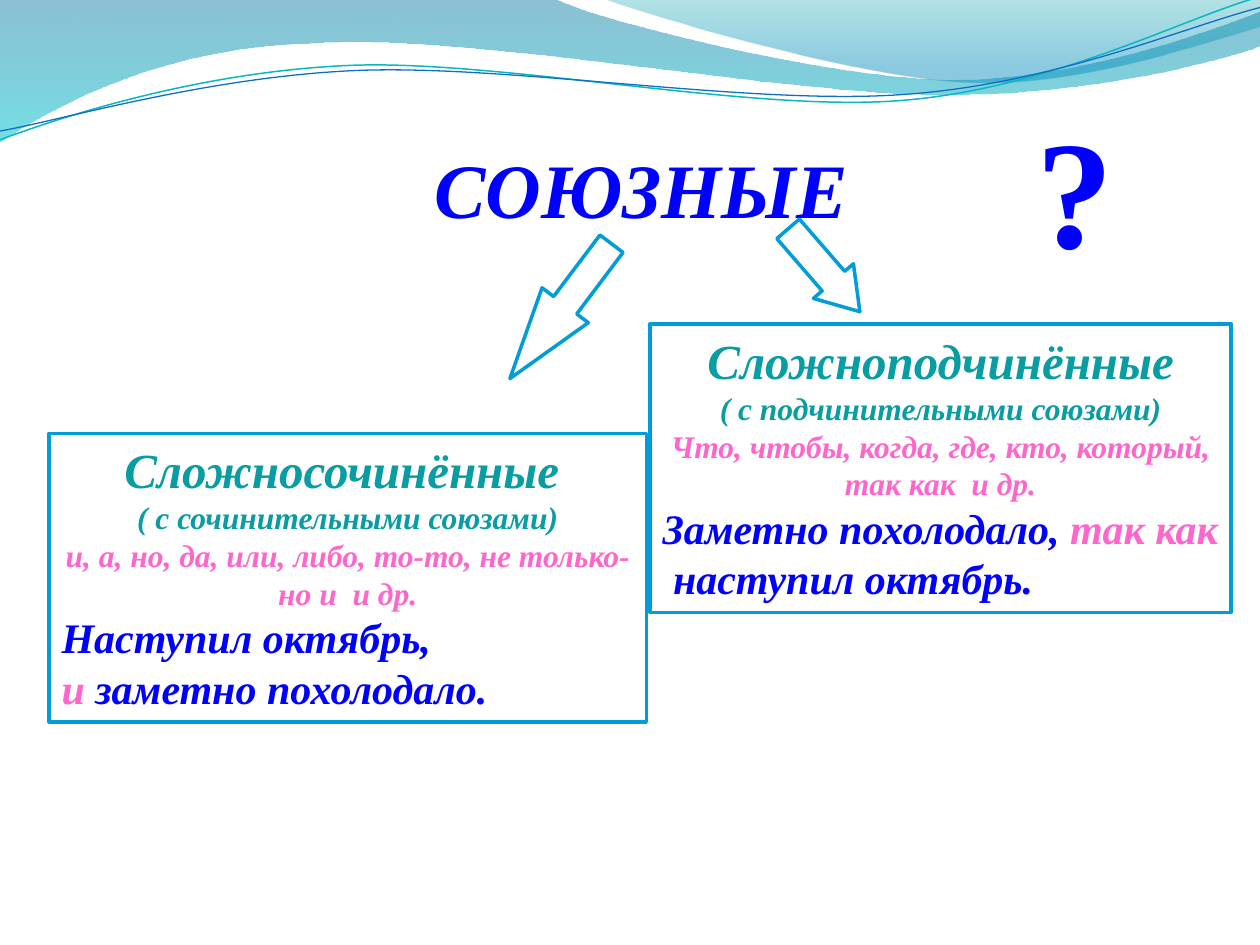
"""Build a slide on the two kinds of compound sentences joined by conjunctions."""
from pptx import Presentation, util as u
from pptx.dml.color import RGBColor
from pptx.enum import shapes, text
from pptx.oxml import ns
from lxml import etree

BLUE = RGBColor(0x00, 0x00, 0xFF)
TEAL = RGBColor(0x08, 0x9C, 0xA3)
PINK = RGBColor(0xFF, 0x66, 0xCC)
WHITE = RGBColor(0xFF, 0xFF, 0xFF)
EDGE = RGBColor(0x00, 0x9D, 0xD9)
AQUA = RGBColor(0x0A, 0xB8, 0xBF)
NAVY = RGBColor(0x0F, 0x6F, 0xC6)
SEA = RGBColor(0x00, 0x74, 0xA1)
CYAN = RGBColor(0x00, 0xC6, 0xCF)
JADE = RGBColor(0x00, 0xA1, 0xA9)
SKY = RGBColor(0x00, 0x8B, 0xBF)
FONT = "Times New Roman"
MID = text.PP_ALIGN.CENTER
LEFT = text.PP_ALIGN.LEFT

WAVES = [
    ([(0, 0), (4.4, -0.01), (4.76, 0.17, 6.64, 0.63, 7.58, 0.63),
      (8.53, 0.63, 9.58, 0.26, 10, 0.09), (10.01, 0.36),
      (9.83, 0.44, 8.7, 0.76, 7.46, 0.75), (6.22, 0.75, 3.82, 0.28, 2.57, 0.34),
      (1.29, 0.36, 0.46, 0.83, -0.01, 1.13), (0, 0)],
     [(0, SEA, 45), (1, CYAN, 55)]),
    ([(4.79, -0.01), (5.09, 0.11, 6.82, 0.62, 7.69, 0.65),
      (8.56, 0.69, 9.61, 0.32, 10, 0.21), (10, 0), (4.79, -0.01)],
     [(0, JADE, 30), (0.8, SKY, 45)]),
]
CURVES = [
    ([(0, 1.11), (0.48, 0.93, 1.58, 0.57, 2.77, 0.52),
      (3.95, 0.47, 5.93, 0.89, 7.13, 0.8), (8.33, 0.71, 9.38, 0.15, 9.98, -0.02)],
     AQUA, 0.85),
    ([(0, 1.04), (0.47, 0.96, 1.64, 0.61, 2.83, 0.56),
      (4.03, 0.51, 5.97, 0.84, 7.17, 0.75), (8.36, 0.67, 9.41, 0.21, 10, 0.06)],
     NAVY, 0.75),
]
TITLE = [(LEFT, 44, [("СОЮЗНЫЕ", BLUE)])]
MARK = [(LEFT, 88, [("?", BLUE)])]
BOXES = [
    ((0.39, 3.44, 4.74, 2.29), [
        (MID, 28, [("Сложносочинённые ", TEAL)]),
        (MID, 18, [("( с сочинительными союзами)", TEAL)]),
        (MID, 18, [("и, а, но, да, или, либо, то-то, не только- но и  и др.", PINK)]),
        (LEFT, 24, [("Наступил октябрь,", BLUE)]),
        (LEFT, 24, [("и", PINK), (" заметно похолодало.", BLUE)])]),
    ((5.16, 2.57, 4.61, 2.29), [
        (MID, 28, [("Сложноподчинённые", TEAL)]),
        (MID, 18, [("( с подчинительными союзами)", TEAL)]),
        (MID, 18, [("Что, чтобы, когда, где, кто, который, так как  и др.", PINK)]),
        (LEFT, 24, [("Заметно похолодало, ", BLUE), ("так как ", PINK),
                    (" наступил октябрь.", BLUE)])]),
]
ARROWS = [
    ((4.22, 1.8, 0.46, 1.34), 37, (0.5, 1.585)),
    ((6.33, 1.71, 0.42, 0.87), 319.1, (0.564, 0.764)),
]


def draw(slide, steps, close):
    """Draw a freeform of lines and cubic curves."""
    ends = [tuple(map(u.Inches, step[-2:])) for step in steps]
    pen = slide.shapes.build_freeform(*ends[0], scale=1.0)
    pen.add_line_segments(ends[1:], close=close)
    shape = pen.convert_to_shape()
    shape.shadow.inherit = False
    lines = list(shape.element.spPr.iter(ns.qn("a:lnTo")))
    for line, step in zip(lines, steps[1:]):
        if len(step) == 2:
            continue
        bend = etree.Element(ns.qn("a:cubicBezTo"))
        for x, y in zip(step[::2], step[1::2]):
            knot = etree.SubElement(bend, ns.qn("a:pt"))
            knot.set("x", str(u.Inches(x) - shape.left))
            knot.set("y", str(u.Inches(y) - shape.top))
        line.getparent().replace(line, bend)
    return shape


def blend(shape, stops):
    """Fill a shape from top to bottom with clear colours."""
    shape.fill.gradient()
    shape.fill.gradient_angle = 270
    for stop, (place, tint, _) in zip(shape.fill.gradient_stops, stops):
        stop.position, stop.color.rgb = place, tint
    tags = shape.element.spPr.iter(ns.qn("a:srgbClr"))
    for tag, (_, _, part) in zip(list(tags), stops):
        etree.SubElement(tag, ns.qn("a:alpha")).set("val", str(part * 1000))
    shape.line.fill.background()


def write(frame, rows, slant=True, wrap=True):
    """Write rows of coloured runs into a text frame."""
    frame.auto_size = text.MSO_AUTO_SIZE.SHAPE_TO_FIT_TEXT
    frame.vertical_anchor = text.MSO_ANCHOR.TOP
    frame.word_wrap = wrap
    for i, (align, size, runs) in enumerate(rows):
        para = frame.paragraphs[0] if i == 0 else frame.add_paragraph()
        para.alignment = align
        for words, tint in runs:
            run = para.add_run()
            run.text = words
            font = run.font
            font.name, font.size, font.bold, font.italic = FONT, u.Pt(size), True, slant
            font.color.rgb = tint


def add(slide, kind, spot):
    """Add a white shape with a blue edge."""
    shape = slide.shapes.add_shape(kind, *map(u.Inches, spot))
    shape.shadow.inherit = False
    shape.fill.solid()
    shape.fill.fore_color.rgb = WHITE
    shape.line.color.rgb = EDGE
    shape.line.width = u.Pt(2)
    return shape


def main():
    """Build and save the slide."""
    deck = Presentation()
    deck.slide_width, deck.slide_height = u.Inches(10), u.Inches(7.5)
    slide = deck.slides.add_slide(deck.slide_layouts[5])
    for steps, stops in WAVES:
        blend(draw(slide, steps, True), stops)
    for steps, tint, width in CURVES:
        curve = draw(slide, steps, False)
        curve.fill.background()
        curve.line.color.rgb = tint
        curve.line.width = u.Pt(width)
    head = slide.shapes.title
    head.left, head.top, head.width, head.height = map(u.Inches, (3.35, 1.07, 3.52, 0.84))
    write(head.text_frame, TITLE, wrap=False)
    slide.shapes._spTree.append(head.element)
    mark = slide.shapes.add_textbox(*map(u.Inches, (8.13, 0.7, 0.4, 1.58)))
    write(mark.text_frame, MARK, slant=False)
    for spot, rows in BOXES:
        write(add(slide, shapes.MSO_SHAPE.RECTANGLE, spot).text_frame, rows)
    for spot, turn, bends in ARROWS:
        arrow = add(slide, shapes.MSO_SHAPE.DOWN_ARROW, spot)
        arrow.rotation = turn
        for i, bend in enumerate(bends):
            arrow.adjustments[i] = bend
    deck.save("out.pptx")


if __name__ == "__main__":
    main()
